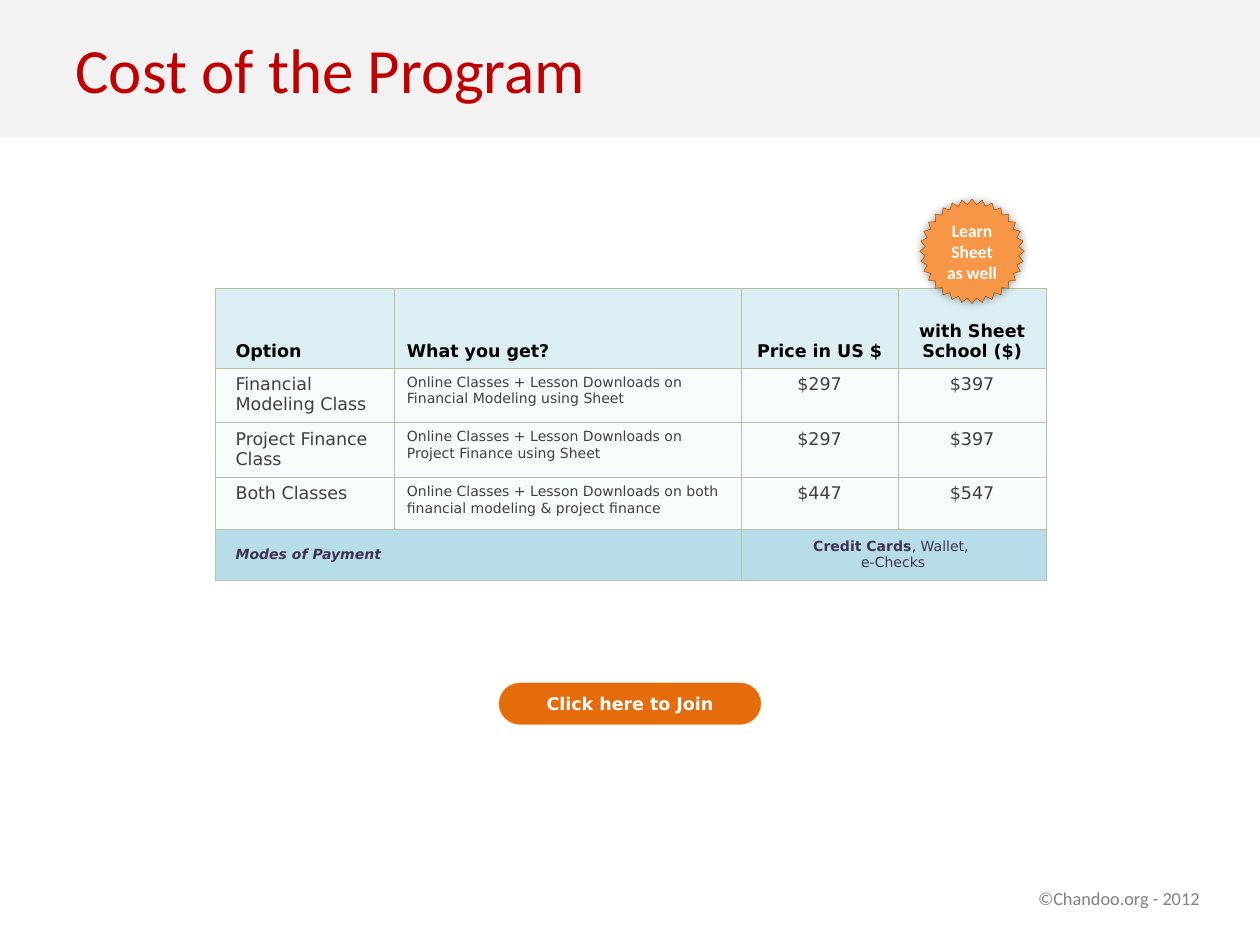
from lxml.etree import SubElement
from pptx import Presentation
from pptx.dml.color import RGBColor
from pptx.enum.shapes import MSO_SHAPE as Kind
from pptx.enum.text import MSO_ANCHOR as Anchor, PP_ALIGN as Align
from pptx.oxml import parse_xml
from pptx.oxml.ns import nsdecls, qn
from pptx.util import Inches, Pt

COLS, ROWS = 100, 75  # slide grid, ten cells to the inch
HUES = {
    "band": "F2F2F2", "title": "C00000", "foot": "808080",
    "head": "DBEEF4", "body": "F6FBFC", "pay": "B7DEE8", "rule": "BDBFA2",
    "black": "000000", "text": "404040", "plum": "403152", "white": "FFFFFF",
    "star": "F79646", "edge": "984807", "join": "E46C0A",
}
SANS, DEJA = "Calibri", "DejaVu Sans"
WIDTHS = (14.2, 27.5, 12.5, 11.7)
HEIGHTS = (6.3, 4.3, 4.2, 4.1, 4.1)
HEADS = ("Option", "What you get?", "Price in US $", "with Sheet School ($)")
PLANS = (
    ("Financial Modeling Class",
     "Online Classes + Lesson Downloads on Financial Modeling using Sheet",
     "$297", "$397"),
    ("Project Finance Class",
     "Online Classes + Lesson Downloads on Project Finance using Sheet",
     "$297", "$397"),
    ("Both Classes",
     "Online Classes + Lesson Downloads on both financial modeling & project finance",
     "$447", "$547"),
)


def grid(*cells):
    """Turn grid cells into lengths."""
    return [Inches(cell / 10) for cell in cells]


def hue(name):
    return RGBColor.from_string(HUES[name])


def write(frame, text, size=10, font=DEJA, color="text", bold=False,
          italic=False, align=Align.LEFT, anchor=Anchor.TOP, wrap=True,
          lead="", indent=0):
    """Fill a frame; lead is bold text placed before the rest."""
    frame.vertical_anchor = anchor
    frame.word_wrap = wrap
    para = frame.paragraphs[0]
    para.alignment = align
    if indent:
        para._p.get_or_add_pPr().set("marL", str(Inches(indent)))
    for part, heavy in ((lead, True), (text, bold)):
        for row, line in enumerate(part.split("\n") if part else ()):
            if row:
                para.add_line_break()
            run = para.add_run()
            run.text = line
            face = run.font
            face.size, face.name = Pt(size), font
            face.bold, face.italic = heavy, italic
            face.color.rgb = hue(color)


def draw(slide, kind, box, fill, line=None, bend=None):
    shape = slide.shapes.add_shape(kind, *grid(*box))
    shape.shadow.inherit = False
    shape.fill.solid()
    shape.fill.fore_color.rgb = hue(fill)
    if line:
        shape.line.color.rgb = hue(line)
        shape.line.width = Pt(0.25)
    else:
        shape.line.fill.background()
    if bend is not None:
        shape.adjustments[0] = bend
    return shape


def header(slide, box):
    x, y, w, h = box
    draw(slide, Kind.RECTANGLE, box, "band")
    title = slide.shapes.add_textbox(*grid(x + w / 20, y, w * 0.9, h))
    write(title.text_frame, "Cost of the Program", size=36, font=SANS,
          color="title", anchor=Anchor.MIDDLE)


def footer(slide, box):
    note = slide.shapes.add_textbox(*grid(*box))
    write(note.text_frame, "©Chandoo.org - 2012", size=10.5, font=SANS,
          color="foot", wrap=False)


def paint(cell, fill):
    """Set the fill and the four borders of a cell."""
    cell.fill.solid()
    cell.fill.fore_color.rgb = hue(fill)
    props = cell._tc.get_or_add_tcPr()
    for spot, side in enumerate("LRTB"):
        line = parse_xml(f'<a:ln{side} {nsdecls("a")} w="{Pt(0.25)}"/>')
        solid = SubElement(line, qn("a:solidFill"))
        SubElement(solid, qn("a:srgbClr"), val=HUES["rule"])
        props.insert(spot, line)


def put(cell, text, anchor=Anchor.TOP, **style):
    cell.vertical_anchor = anchor
    write(cell.text_frame, text, anchor=anchor, **style)


def prices(slide, box):
    x, y, w, h = box
    table = slide.shapes.add_table(len(HEIGHTS), len(WIDTHS), *grid(*box)).table
    table.first_row = table.horz_banding = False
    for col, share in zip(table.columns, WIDTHS):
        col.width = grid(w * share / sum(WIDTHS))[0]
    for row, share in zip(table.rows, HEIGHTS):
        row.height = grid(h * share / sum(HEIGHTS))[0]

    last = len(HEIGHTS) - 1
    for r in range(last + 1):
        fill = "head" if r == 0 else "pay" if r == last else "body"
        for c in range(len(WIDTHS)):
            paint(table.cell(r, c), fill)

    for r, texts in enumerate((HEADS, *PLANS)):
        top = r == 0
        for c, text in enumerate(texts):
            put(table.cell(r, c), text,
                size=8 if c == 1 and not top else 10,
                color="black" if top else "text", bold=top,
                align=Align.CENTER if c > 1 else Align.LEFT,
                anchor=Anchor.BOTTOM if top else Anchor.TOP,
                indent=0 if c else 0.06)

    for c in (0, 2):
        table.cell(last, c).merge(table.cell(last, c + 1))
    style = dict(size=8, color="plum", anchor=Anchor.MIDDLE)
    put(table.cell(last, 0), "Modes of Payment", bold=True, italic=True,
        indent=0.06, **style)
    put(table.cell(last, 2), ", Wallet, \ne-Checks", lead="Credit Cards",
        align=Align.CENTER, **style)


def badge(slide, box):
    star = draw(slide, Kind.STAR_32_POINT, box, "star", "edge", 0.448)
    glow = SubElement(star._element.spPr.find(qn("a:effectLst")),
                      qn("a:outerShdw"), blurRad=str(Pt(5)), dist="0",
                      dir="0", algn="ctr", rotWithShape="0")
    tint = SubElement(glow, qn("a:srgbClr"), val=HUES["black"])
    SubElement(tint, qn("a:alpha"), val="40000")
    frame = star.text_frame
    frame.margin_left = frame.margin_right = 0
    frame.margin_top = frame.margin_bottom = 0
    write(frame, "Learn Sheet\nas well", font=SANS, color="white", bold=True,
          align=Align.CENTER, anchor=Anchor.MIDDLE)


def button(slide, box):
    pill = draw(slide, Kind.ROUNDED_RECTANGLE, box, "join", "star", 0.5)
    write(pill.text_frame, "Click here to Join", color="white", bold=True,
          align=Align.CENTER, anchor=Anchor.MIDDLE)


def main():
    deck = Presentation()
    deck.slide_width, deck.slide_height = grid(COLS, ROWS)
    slide = deck.slides.add_slide(deck.slide_layouts[6])
    header(slide, (0, 0, COLS, 10.9))
    footer(slide, (81.4, 69.9, 15.1, 2.8))
    prices(slide, (17.1, 22.9, sum(WIDTHS), sum(HEIGHTS)))
    badge(slide, (73, 15.8, 8.3, 8.3))
    button(slide, (39.6, 54.2, 20.8, 3.3))
    deck.save("out.pptx")


if __name__ == "__main__":
    main()
